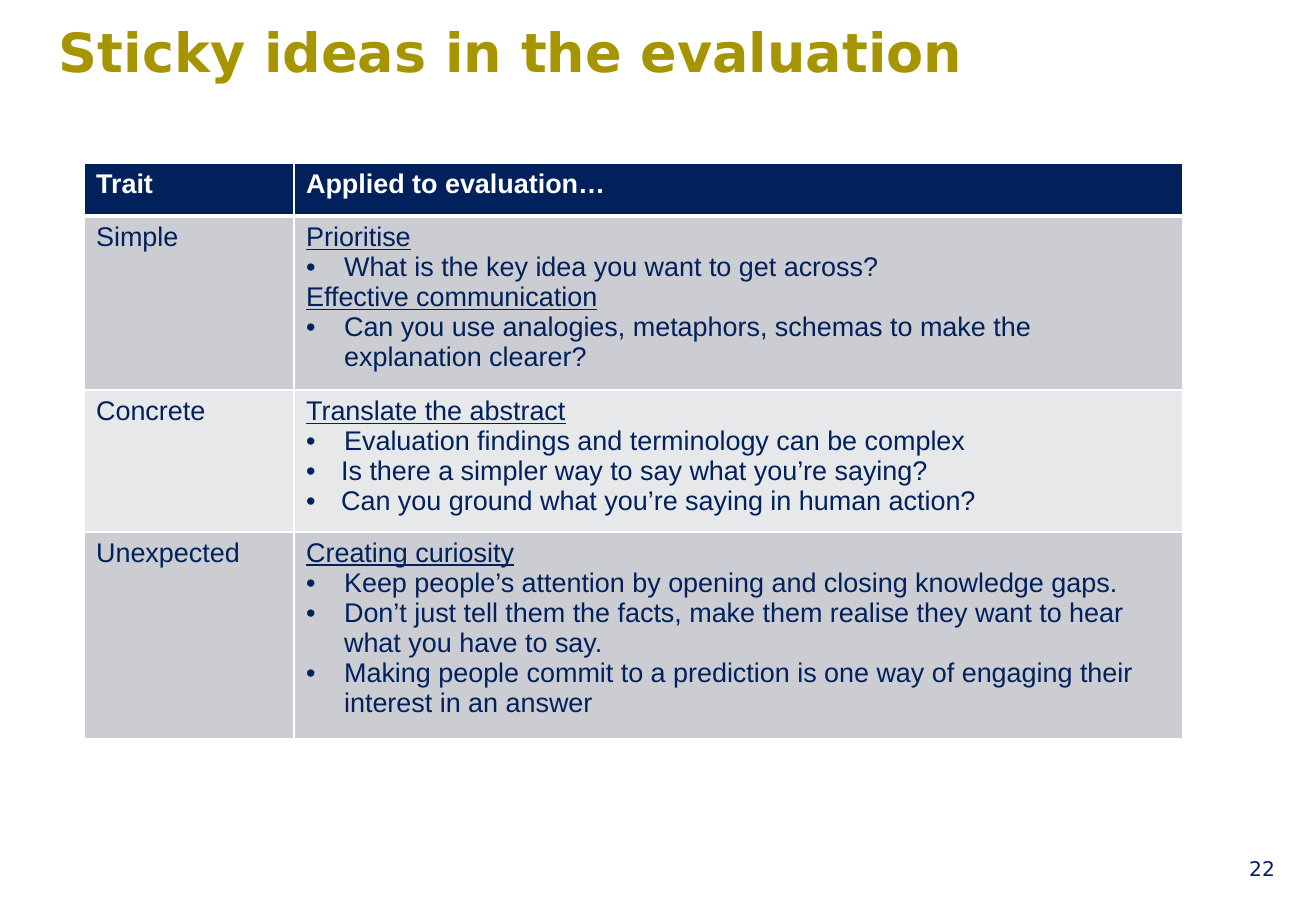
from lxml import etree
from pptx import Presentation
from pptx.dml.color import RGBColor
from pptx.enum.text import MSO_ANCHOR, PP_ALIGN
from pptx.oxml.ns import qn
from pptx.util import Emu, Pt

RIGHT = PP_ALIGN.RIGHT
LEFT = PP_ALIGN.LEFT
TOP = MSO_ANCHOR.TOP
MIDDLE = MSO_ANCHOR.MIDDLE

# Content: each line is (kind, text)
TITLE = "Sticky ideas in the evaluation"
PAGE_NUMBER = "22"
HEADERS = ("Trait", "Applied to evaluation…")
TRAITS = [
    ("Simple", [
        ("heading", "Prioritise"),
        ("bullet", "What is the key idea you want to get across?"),
        ("heading", "Effective communication"),
        ("bullet", "Can you use analogies, metaphors, schemas to make the explanation clearer?"),
    ]),
    ("Concrete", [
        ("heading", "Translate the abstract"),
        ("bullet", "Evaluation findings and terminology can be complex"),
        ("sub-bullet", "Is there a simpler way to say what you’re saying?"),
        ("sub-bullet", "Can you ground what you’re saying in human action?"),
    ]),
    ("Unexpected", [
        ("heading", "Creating curiosity"),
        ("bullet", "Keep people’s attention by opening and closing knowledge gaps."),
        ("bullet", "Don’t just tell them the facts, make them realise they want to hear "
                   "what you have to say."),
        ("bullet", "Making people commit to a prediction is one way of engaging their "
                   "interest in an answer"),
    ]),
]

# Style and layout in px
NAVY, GOLD, WHITE = "00215B", "A69500", "FFFFFF"
BANDS = ("CCCDD2", "E7E8EA")
TITLE_FONT, TABLE_FONT = "DejaVu Sans", "Arial"
PX_PER_INCH = 121.5
SLIDE_SIZE = (1316, 911)
TITLE_BOX = (59, 19, 1163, 123)
NUMBER_BOX = (980, 844, 307, 49)
TABLE_LEFT, TABLE_TOP = 84, 163
COLUMN_WIDTHS = (210, 889)
ROW_HEIGHTS = (53, 162, 132, 192)
INDENTS = {"bullet": (0, 38), "sub-bullet": (1, 35)}  # level, hanging indent


def px(value):
    return Emu(round(value * 914400 / PX_PER_INCH))


def color(hex_string):
    return RGBColor.from_string(hex_string)


def add_run(paragraph, text, font, size, hex_color, bold=False, underline=False):
    run = paragraph.add_run()
    run.text = text
    run.font.name = font
    run.font.size = Pt(size)
    run.font.bold = bold
    run.font.underline = underline
    run.font.color.rgb = color(hex_color)


def add_text(slide, box, text, size, hex_color, bold, align, anchor, margin):
    frame = slide.shapes.add_textbox(*map(px, box)).text_frame
    frame.word_wrap = True
    frame.vertical_anchor = anchor
    frame.margin_left = frame.margin_right = px(margin)
    frame.margin_top = frame.margin_bottom = px(margin / 2)
    paragraph = frame.paragraphs[0]
    paragraph.alignment = align
    add_run(paragraph, text, TITLE_FONT, size, hex_color, bold)


def add_bullet(paragraph, level, indent):
    paragraph.level = level
    properties = paragraph._p.get_or_add_pPr()
    properties.set("marL", str(px(indent)))
    properties.set("indent", str(-px(indent)))
    etree.SubElement(properties, qn("a:buFont")).set("typeface", TABLE_FONT)
    etree.SubElement(properties, qn("a:buChar")).set("char", "•")


def style_cell(cell, fill, top_width, bottom_width):
    cell.fill.solid()
    cell.fill.fore_color.rgb = color(fill)
    properties = cell._tc.get_or_add_tcPr()
    widths = {"lnL": 1, "lnR": 1, "lnT": top_width, "lnB": bottom_width}
    for index, (side, width) in enumerate(widths.items()):
        line = etree.Element(qn(f"a:{side}"), w=str(Pt(width)))
        line_fill = etree.SubElement(line, qn("a:solidFill"))
        etree.SubElement(line_fill, qn("a:srgbClr")).set("val", WHITE)
        properties.insert(index, line)


def fill_cell(cell, lines, text_color, bold):
    frame = cell.text_frame
    for index, (kind, text) in enumerate(lines):
        paragraph = frame.add_paragraph() if index else frame.paragraphs[0]
        if kind in INDENTS:
            add_bullet(paragraph, *INDENTS[kind])
        add_run(paragraph, text, TABLE_FONT, 16, text_color, bold, kind == "heading")


def add_trait_table(slide):
    rows = [[[("plain", header)] for header in HEADERS]]
    rows += [[[("plain", trait)], lines] for trait, lines in TRAITS]
    table = slide.shapes.add_table(
        len(rows), len(HEADERS), px(TABLE_LEFT), px(TABLE_TOP),
        px(sum(COLUMN_WIDTHS)), px(sum(ROW_HEIGHTS))).table
    for column, width in zip(table.columns, COLUMN_WIDTHS):
        column.width = px(width)
    for row, height in zip(table.rows, ROW_HEIGHTS):
        row.height = px(height)
    for row_index, row in enumerate(rows):
        is_header = row_index == 0
        fill = NAVY if is_header else BANDS[(row_index - 1) % 2]
        top_width = 3 if row_index == 1 else 1
        bottom_width = 3 if is_header else 1
        for column_index, lines in enumerate(row):
            cell = table.cell(row_index, column_index)
            style_cell(cell, fill, top_width, bottom_width)
            fill_cell(cell, lines, WHITE if is_header else NAVY, is_header)


def main():
    presentation = Presentation()
    presentation.slide_width, presentation.slide_height = map(px, SLIDE_SIZE)
    slide = presentation.slides.add_slide(presentation.slide_layouts[6])

    # Title, page number and table
    add_text(slide, TITLE_BOX, TITLE, 32, GOLD, True, LEFT, TOP, 0)
    add_text(slide, NUMBER_BOX, PAGE_NUMBER, 12, NAVY, False, RIGHT, MIDDLE, 12)
    add_trait_table(slide)

    presentation.save("out.pptx")


if __name__ == "__main__":
    main()
